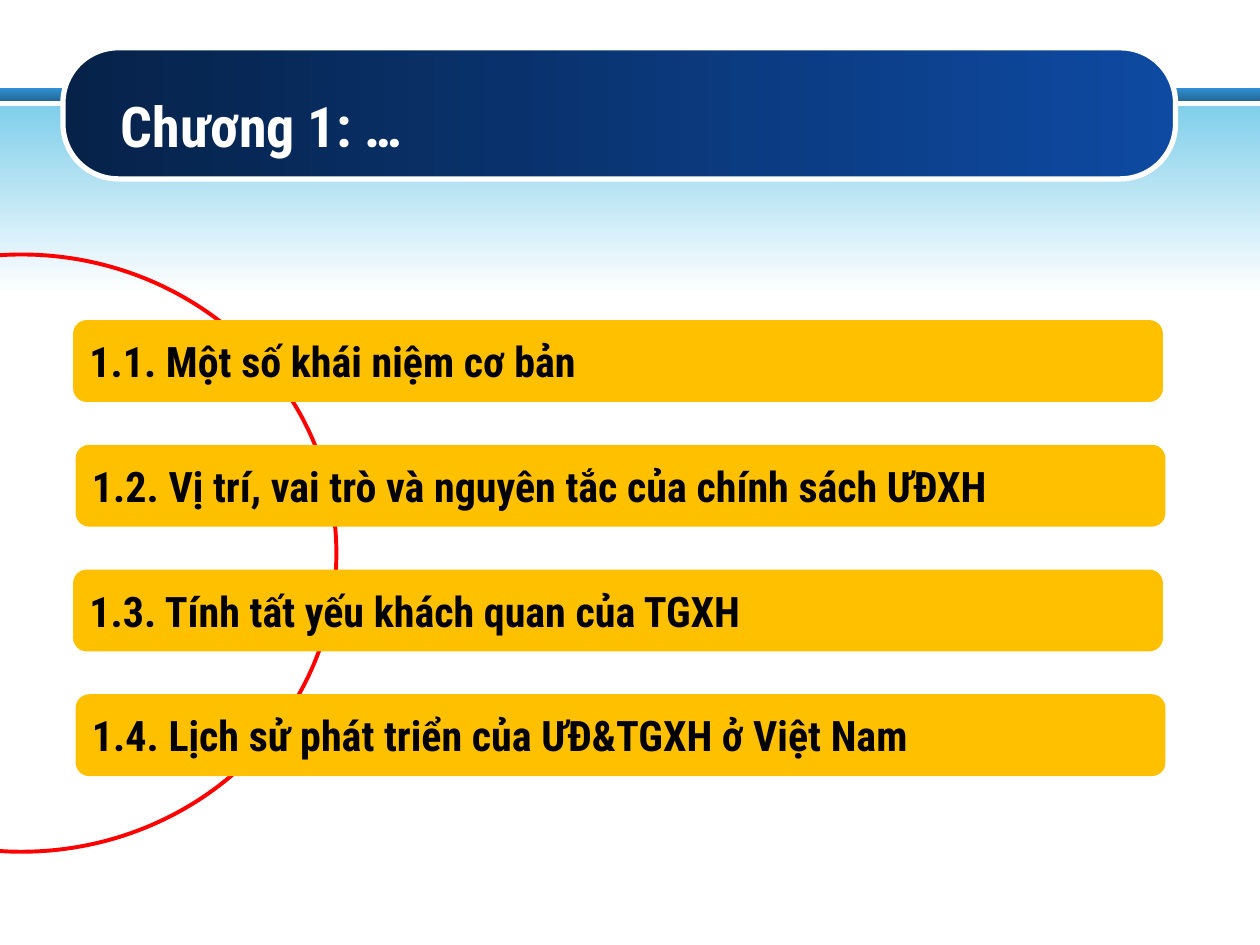
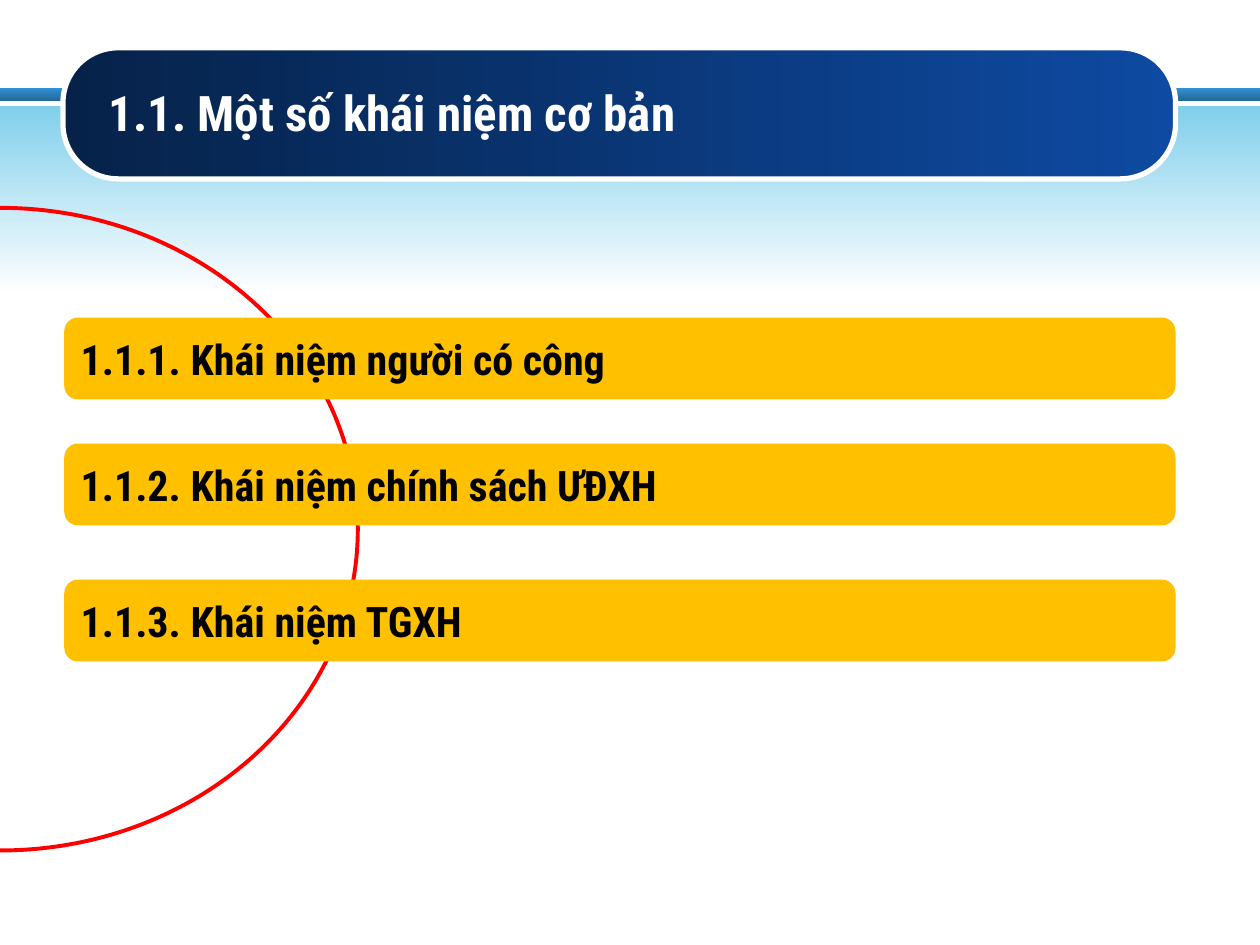
from pptx import Presentation
from pptx.dml.color import RGBColor
from pptx.enum.shapes import MSO_SHAPE as Preset
from pptx.enum.text import MSO_ANCHOR as Anchor, MSO_AUTO_SIZE as AutoSize, PP_ALIGN as Align
from pptx.util import Inches, Pt

FONT = "Roboto Condensed"
WHITE = RGBColor(0xFF, 0xFF, 0xFF)
BLACK = RGBColor(0x00, 0x00, 0x00)
RED = RGBColor(0xFF, 0x00, 0x00)
AMBER = RGBColor(0xFF, 0xC0, 0x00)
STRIPE_TOP = RGBColor(0x31, 0x91, 0xD3)
STRIPE_BOTTOM = RGBColor(0x23, 0x68, 0x97)
SKY = RGBColor(0x81, 0xCF, 0xEB)
NAVY = RGBColor(0x06, 0x22, 0x49)
ROYAL = RGBColor(0x0E, 0x4A, 0xA2)
DOWNWARD, RIGHTWARD = 270, 0
TOPIC_HEIGHT = 0.65


def add_plain_shape(slide, preset, left, top, width, height):
    """Add a preset shape without shadow or outline."""
    shape = slide.shapes.add_shape(
        preset, Inches(left), Inches(top), Inches(width), Inches(height))
    shape.shadow.inherit = False
    shape.line.fill.background()
    return shape


def fill_gradient(shape, start, end, angle):
    """Fill a shape with a linear gradient of two colours."""
    shape.fill.gradient()
    shape.fill.gradient_angle = angle
    for stop, position, color in zip(shape.fill.gradient_stops, (0, 1), (start, end)):
        stop.position = position
        stop.color.rgb = color


def style_text(frame, size, color):
    """Set one bold, left-aligned, vertically centred text style."""
    frame.vertical_anchor = Anchor.MIDDLE
    for paragraph in frame.paragraphs:
        paragraph.alignment = Align.LEFT
        for run in paragraph.runs:
            run.font.name = FONT
            run.font.size = Pt(size)
            run.font.bold = True
            run.font.color.rgb = color


def decorate_layout(layout, slide):
    """Put the bands and the title pill behind the layout title."""
    stripe = add_plain_shape(slide, Preset.RECTANGLE, 0, 0.7, 10, 0.1)
    fill_gradient(stripe, STRIPE_TOP, STRIPE_BOTTOM, DOWNWARD)
    glow = add_plain_shape(slide, Preset.RECTANGLE, 0, 0.84, 10, 1.49)
    fill_gradient(glow, SKY, WHITE, DOWNWARD)
    pill = add_plain_shape(slide, Preset.ROUNDED_RECTANGLE, 0.5, 0.38, 8.83, 1.04)
    pill.adjustments[0] = 0.42
    fill_gradient(pill, NAVY, ROYAL, RIGHTWARD)
    pill.line.color.rgb = WHITE
    pill.line.width = Pt(3)

    heading = layout.placeholders[0]
    heading.left, heading.top = Inches(0.76), Inches(0.29)
    heading.width, heading.height = Inches(8.41), Inches(1.2)
    for band in (stripe, glow, pill):
        heading.element.addprevious(band.element)


def set_title(slide, text, size, indent=0.1, line_spacing=1.0):
    """Write the slide title on the pill."""
    frame = slide.shapes.title.text_frame
    frame.text = text
    frame.auto_size = AutoSize.NONE
    frame.margin_left = Inches(indent)
    frame.paragraphs[0].line_spacing = line_spacing
    style_text(frame, size, WHITE)


def add_arc(slide, left, top, width, height):
    """Add the red ring that runs behind the topics."""
    ring = add_plain_shape(slide, Preset.OVAL, left, top, width, height)
    ring.fill.background()
    ring.line.color.rgb = RED
    ring.line.width = Pt(2.25)


def add_topic(slide, text, left, top, width):
    """Add one amber topic bar."""
    topic = add_plain_shape(
        slide, Preset.ROUNDED_RECTANGLE, left, top, width, TOPIC_HEIGHT)
    topic.fill.solid()
    topic.fill.fore_color.rgb = AMBER
    topic.text_frame.text = text
    style_text(topic.text_frame, 24, BLACK)


def build_chapter(slide):
    """Fill the chapter overview slide."""
    set_title(slide, "Chương 1: …", 32, indent=0.2, line_spacing=1.4)
    add_arc(slide, -2.33, 2.02, 5, 4.74)
    topics = (
        "1.1. Một số khái niệm cơ bản",
        "1.2. Vị trí, vai trò và nguyên tắc của chính sách ƯĐXH",
        "1.3. Tính tất yếu khách quan của TGXH",
        "1.4. Lịch sử phát triển của ƯĐ&TGXH ở Việt Nam",
    )
    for index, text in enumerate(topics):
        add_topic(slide, text, 0.58 + 0.02 * (index % 2), 2.54 + 0.99 * index, 8.65)


def build_concepts(slide):
    """Fill the basic concepts slide."""
    set_title(slide, "1.1. Một số khái niệm cơ bản", 28)
    add_arc(slide, -2.83, 1.65, 5.67, 5.1)
    topics = (
        ("1.1.1. Khái niệm người có công", 2.52),
        ("1.1.2. Khái niệm chính sách ƯĐXH", 3.52),
        ("1.1.3. Khái niệm TGXH", 4.6),
    )
    for text, top in topics:
        add_topic(slide, text, 0.51, top, 8.82)


def main():
    """Build and save the two slides."""
    deck = Presentation()
    deck.slide_width, deck.slide_height = Inches(10), Inches(7.5)
    title_only = deck.slide_layouts[5]
    chapter = deck.slides.add_slide(title_only)
    decorate_layout(title_only, chapter)
    build_chapter(chapter)
    build_concepts(deck.slides.add_slide(title_only))
    deck.save("out.pptx")


if __name__ == "__main__":
    main()
